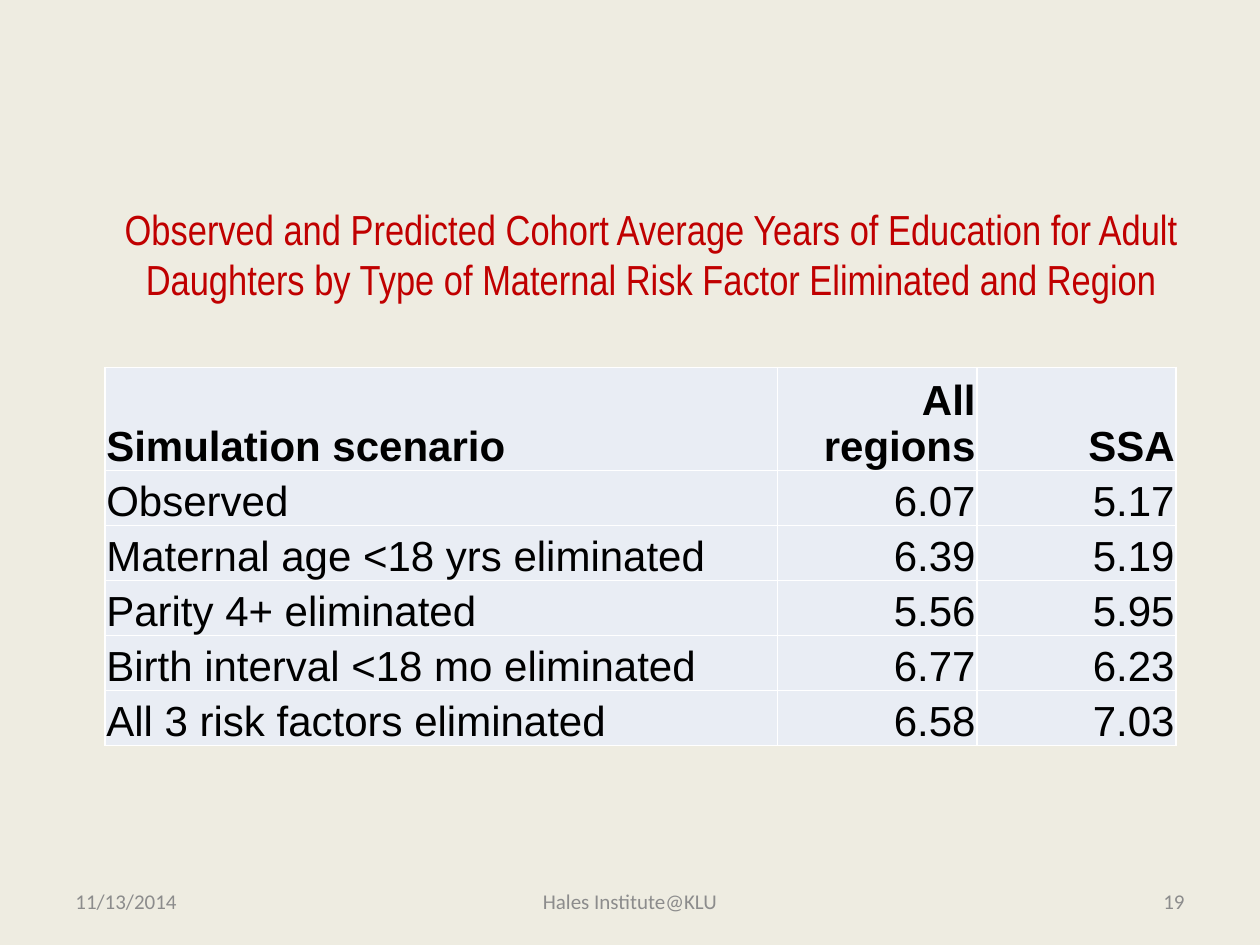
from lxml.etree import SubElement
from pptx import Presentation
from pptx.dml.color import RGBColor
from pptx.enum.text import MSO_ANCHOR, PP_ALIGN
from pptx.oxml.ns import qn
from pptx.util import Pt

COLORS = {
    "background": "EEECE1",
    "title": "C00000",
    "cell": "E9EDF4",
    "border": "FFFFFF",
    "body": "000000",
    "footer": "8C8C8C",
}

TITLE = ("Observed and Predicted Cohort Average Years of Education for Adult "
         "Daughters by Type of Maternal Risk Factor Eliminated and Region")
ROWS = [
    ("Simulation scenario", "All regions", "SSA"),
    ("Observed", "6.07", "5.17"),
    ("Maternal age <18 yrs eliminated", "6.39", "5.19"),
    ("Parity 4+ eliminated", "5.56", "5.95"),
    ("Birth interval <18 mo eliminated", "6.77", "6.23"),
    ("All 3 risk factors eliminated", "6.58", "7.03"),
]
# Text, left, width, alignment
FOOTERS = [
    ("11/13/2014", 36, 168, PP_ALIGN.LEFT),
    ("Hales Institute@KLU", 246, 228, PP_ALIGN.CENTER),
    ("19", 516, 168, PP_ALIGN.RIGHT),
]

TABLE_LEFT, TABLE_TOP = 60, 210
COLUMN_WIDTHS = [384.4, 113.8, 113.8]
ROW_HEIGHTS = [59] + [31.4] * (len(ROWS) - 1)


def color(name):
    return RGBColor.from_string(COLORS[name])


def write(frame, text, size, font, color_name, align, bold=False):
    para = frame.paragraphs[0]
    para.alignment = align
    span = para.add_run()
    span.text = text
    span.font.size = Pt(size)
    span.font.name = font
    span.font.bold = bold
    span.font.color.rgb = color(color_name)


def add_text(page, place, *style):
    box = page.shapes.add_textbox(*[Pt(length) for length in place])
    frame = box.text_frame
    frame.word_wrap = True
    frame.vertical_anchor = MSO_ANCHOR.MIDDLE
    write(frame, *style)
    return frame


def add_borders(cell):
    properties = cell._tc.get_or_add_tcPr()
    for side in ("a:lnL", "a:lnR", "a:lnT", "a:lnB"):
        line = SubElement(properties, qn(side), w=str(Pt(1)))
        fill = SubElement(line, qn("a:solidFill"))
        SubElement(fill, qn("a:srgbClr"), val=COLORS["border"])


def add_scenario_table(page):
    frame = page.shapes.add_table(
        len(ROWS), len(COLUMN_WIDTHS), Pt(TABLE_LEFT), Pt(TABLE_TOP),
        Pt(sum(COLUMN_WIDTHS)), Pt(sum(ROW_HEIGHTS)))
    table = frame.table
    for column, width in zip(table.columns, COLUMN_WIDTHS):
        column.width = Pt(width)
    for row, height in zip(table.rows, ROW_HEIGHTS):
        row.height = Pt(height)
    for r, values in enumerate(ROWS):
        for c, value in enumerate(values):
            cell = table.cell(r, c)
            cell.margin_left = cell.margin_right = cell.margin_top = Pt(0.75)
            cell.margin_bottom = Pt(0)
            cell.vertical_anchor = MSO_ANCHOR.BOTTOM
            add_borders(cell)
            cell.fill.solid()
            cell.fill.fore_color.rgb = color("cell")
            align = PP_ALIGN.RIGHT if c else PP_ALIGN.LEFT
            write(cell.text_frame, value, 24, "Arial", "body", align, r == 0)


def main():
    deck = Presentation()
    deck.slide_width, deck.slide_height = Pt(720), Pt(540)
    page = deck.slides.add_slide(deck.slide_layouts[6])
    page.background.fill.solid()
    page.background.fill.fore_color.rgb = color("background")

    # Title, raised by a deeper bottom margin
    title = add_text(page, (48, 114, 648, 90), TITLE, 24, "Arial Narrow",
                     "title", PP_ALIGN.CENTER)
    title.margin_bottom = Pt(32)

    # Scenario table
    add_scenario_table(page)

    # Footer line
    for text, left, width, align in FOOTERS:
        add_text(page, (left, 500.5, width, 28.75), text, 12, "Calibri",
                 "footer", align)

    deck.save("out.pptx")


if __name__ == "__main__":
    main()
